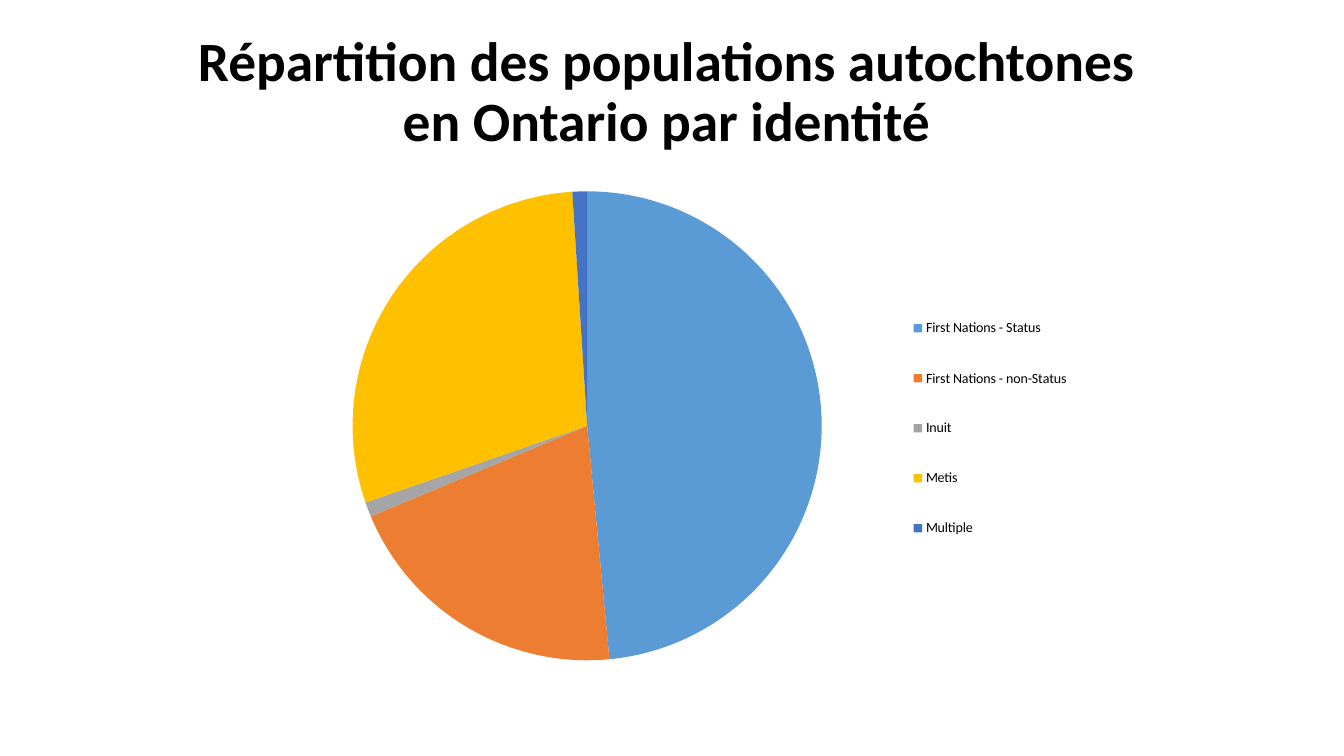
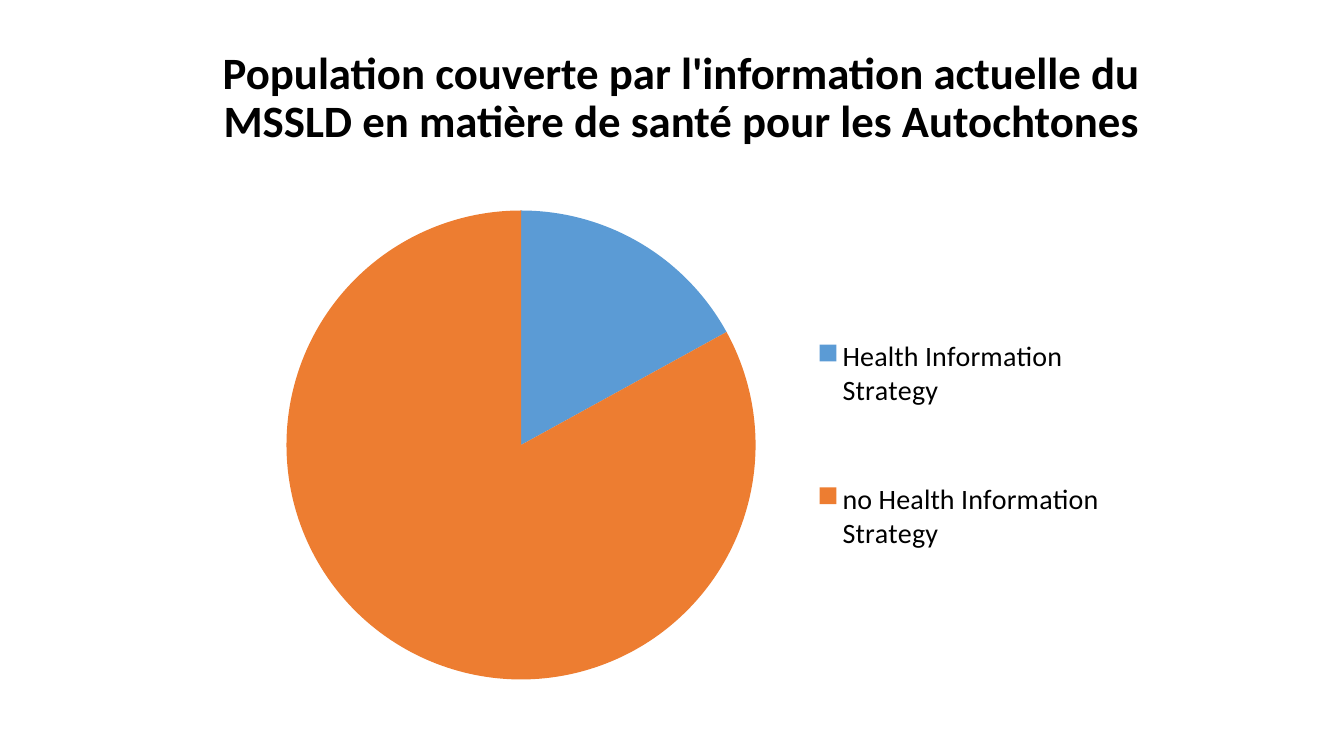
from pptx import Presentation
from pptx.chart.data import CategoryChartData as Data
from pptx.dml.color import RGBColor
from pptx.enum.chart import XL_CHART_TYPE as Kind, XL_LEGEND_POSITION as Side
from pptx.enum.text import MSO_ANCHOR as Anchor, MSO_AUTO_SIZE as Fit, PP_ALIGN as Align
from pptx.oxml import parse_xml
from pptx.oxml.ns import nsdecls
from pptx.util import Inches, Pt

FONT = "Calibri"
BLACK = "000000"
HUES = ["5B9BD5", "ED7D31", "A5A5A5", "FFC000", "4472C4"]


def style(font, size, color=BLACK, bold=False, text=None, frame=None):
    if frame is not None:
        frame.text = text
        frame.word_wrap = True
        frame.auto_size = Fit.NONE
        frame.vertical_anchor = Anchor.MIDDLE
        line = frame.paragraphs[0]
        line.alignment = Align.CENTER
        line.line_spacing = 0.9
        font = line.runs[0].font
    font.name = FONT
    font.size = Pt(size)
    font.bold = bold
    font.color.rgb = RGBColor.from_string(color)


def layout(x, y, w, h, inner=False):
    target = '<c:layoutTarget val="inner"/>' if inner else ""
    return parse_xml(
        f'<c:layout {nsdecls("c")}><c:manualLayout>{target}'
        '<c:xMode val="edge"/><c:yMode val="edge"/>'
        f'<c:x val="{x}"/><c:y val="{y}"/><c:w val="{w}"/><c:h val="{h}"/>'
        '</c:manualLayout></c:layout>')


pages = [
    dict(title="Répartition des populations autochtones en Ontario par identité",
         size=39.6, head=(1.67, 0.3, 9.88, 1.25), box=(2.17, 1.75, 9, 4.95),
         data={"First Nations - Status": 48, "First Nations - non-Status": 20,
               "Inuit": 1, "Metis": 29, "Multiple": 1},
         small=10, pie=0.146, key=(0.75, 0.22, 0.2, 0.57)),
    dict(title="Population couverte par l'information actuelle du MSSLD "
               "en matière de santé pour les Autochtones",
         size=32, head=(1.86, 0.36, 9.8, 1.25), box=(2.18, 1.94, 9, 4.95),
         data={"Health Information Strategy": 17,
               "no Health Information Strategy": 83},
         small=20, pie=0.072, key=(0.64, 0.14, 0.35, 0.72)),
]

deck = Presentation()
deck.slide_width, deck.slide_height = Inches(13.33), Inches(7.5)

for page in pages:
    slide = deck.slides.add_slide(deck.slide_layouts[5])
    title = slide.shapes.title
    title.left, title.top, title.width, title.height = map(Inches, page["head"])
    style(None, page["size"], bold=True, text=page["title"], frame=title.text_frame)

    data = Data()
    data.categories = list(page["data"])
    data.add_series("Series 1", list(page["data"].values()))
    chart = slide.shapes.add_chart(Kind.PIE, *map(Inches, page["box"]), data).chart
    chart.has_title = False
    style(chart.font, 10)

    plot = chart.plots[0]
    plot.vary_by_categories = True
    for i, hue in enumerate(HUES[:len(page["data"])]):
        part = plot.series[0].points[i].format
        part.fill.solid()
        part.fill.fore_color.rgb = RGBColor.from_string(hue)
        part.line.fill.background()

    chart.has_legend = True
    legend = chart.legend
    legend.position = Side.RIGHT
    legend.include_in_layout = False
    style(legend.font, page["small"])

    area = chart._chartSpace.chart.plotArea
    pos = legend._element.find("{*}legendPos")
    for node in area.findall("{*}layout") + legend._element.findall("{*}layout"):
        node.getparent().remove(node)
    area.insert(0, layout(page["pie"], 0.03, 0.52, 0.94, inner=True))
    pos.addnext(layout(*page["key"]))

deck.save("out.pptx")
